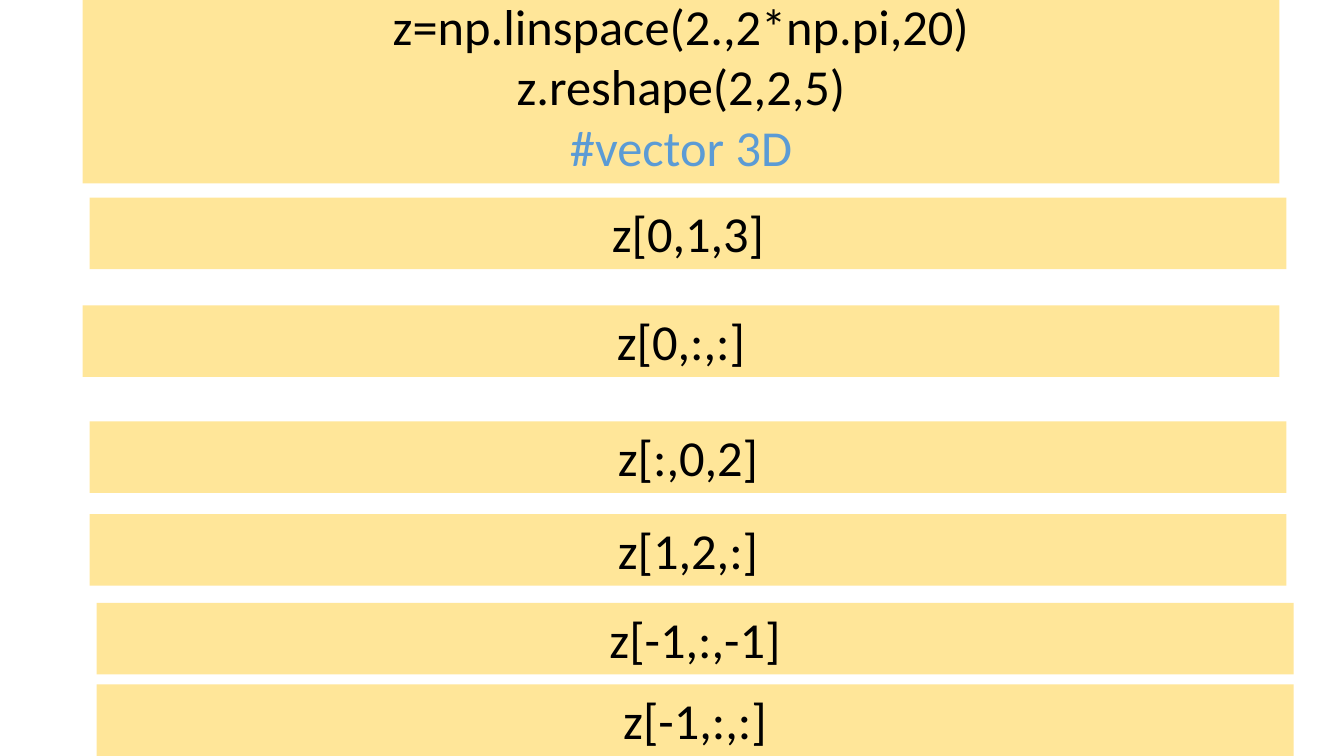
from pptx import Presentation
from pptx.dml.color import RGBColor
from pptx.enum.text import MSO_AUTO_SIZE, PP_ALIGN
from pptx.util import Inches, Pt

SAND = RGBColor(0xFF, 0xE6, 0x99)
BLACK = RGBColor(0x00, 0x00, 0x00)
BLUE = RGBColor(0x5B, 0x9B, 0xD5)

BAND_WIDTH = 11.87
# left, top, height, code lines
BANDS = [
    (0.82, -0.1, 1.92, ["z=np.linspace(2.,2*np.pi,20)", "z.reshape(2,2,5)", "#vector 3D"]),
    (0.89, 1.96, 0.71, ["z[0,1,3]"]),
    (0.82, 3.03, 0.71, ["z[0,:,:]"]),
    (0.89, 4.18, 0.71, ["z[:,0,2]"]),
    (0.89, 5.1, 0.71, ["z[1,2,:]"]),
    (0.96, 5.98, 0.71, ["z[-1,:,-1]"]),
    (0.96, 6.79, 0.71, ["z[-1,:,:]"]),
]

prs = Presentation()
prs.slide_width, prs.slide_height = Inches(13.33), Inches(7.5)
slide = prs.slides.add_slide(prs.slide_layouts[6])

for left, top, height, lines in BANDS:
    sp = slide.shapes.add_textbox(Inches(left), Inches(top), Inches(BAND_WIDTH), Inches(height))
    sp.fill.solid()
    sp.fill.fore_color.rgb = SAND
    tf = sp.text_frame
    tf.word_wrap = True
    tf.auto_size = MSO_AUTO_SIZE.SHAPE_TO_FIT_TEXT
    tf.text = "\n".join(lines)
    for p in tf.paragraphs:
        p.alignment = PP_ALIGN.CENTER
        for r in p.runs:
            r.font.name = "Calibri"
            r.font.size = Pt(36)
            r.font.color.rgb = BLUE if r.text.startswith("#") else BLACK

prs.save("out.pptx")
